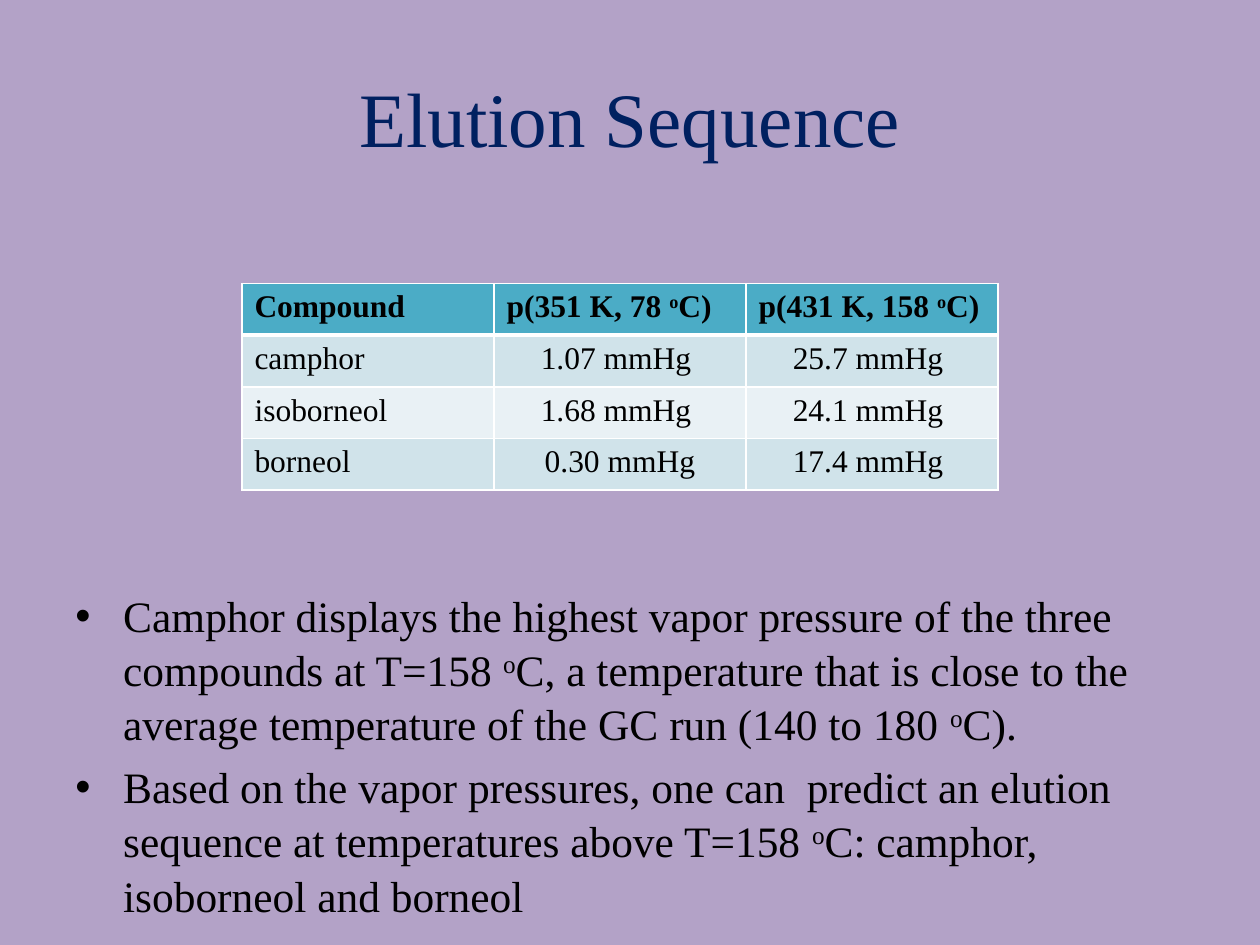
"""Build the Elution Sequence slide with a vapor pressure table and conclusions."""
import dataclasses
import typing

import lxml.etree
import pptx
import pptx.dml.color
import pptx.enum.text
import pptx.oxml.ns
import pptx.util

Inches = pptx.util.Inches
Pt = pptx.util.Pt
RGB = pptx.dml.color.RGBColor.from_string
ALIGN = pptx.enum.text.PP_ALIGN
ANCHOR = pptx.enum.text.MSO_ANCHOR
qn = pptx.oxml.ns.qn


@dataclasses.dataclass(frozen=True)
class Theme:
    font: str = "Times New Roman"
    background: str = "B3A2C7"
    title: str = "002060"
    text: str = "000000"
    header: str = "4BACC6"
    bands: tuple[str, str] = ("D0E3EA", "E9F1F5")
    border: str = "FFFFFF"
    title_size: float = 44
    body_size: float = 24.8
    table_size: float = 18


class Run(typing.NamedTuple):
    text: str
    raised: bool = False


class Row(typing.NamedTuple):
    cells: tuple[tuple[Run, ...], ...]
    fill: str
    header: bool = False


THEME = Theme()
DEGREE = Run("o", True)


def degrees(*parts: str) -> tuple[Run, ...]:
    """Join text parts with a raised degree letter."""
    runs = [Run(parts[0])]
    for part in parts[1:]:
        runs += [DEGREE, Run(part)]
    return tuple(runs)


DATA = (
    ("camphor", "1.07 mmHg ", "25.7 mmHg "),
    ("isoborneol", "1.68 mmHg ", "24.1 mmHg "),
    ("borneol", "0.30 mmHg", "17.4 mmHg "),
)
HEADER = Row(
    (degrees("Compound"), degrees("p(351 K, 78 ", "C)"), degrees("p(431 K, 158 ", "C)")),
    THEME.header,
    True,
)
ROWS = (HEADER,) + tuple(
    Row(tuple(degrees(value) for value in values), THEME.bands[i % 2])
    for i, values in enumerate(DATA)
)
BULLETS = (
    degrees(
        "Camphor displays the highest vapor pressure of the three compounds at T=158 ",
        "C, a temperature that is close to the average temperature of the GC run (140 to 180 ",
        "C).",
    ),
    degrees(
        "Based on the vapor pressures, one can  predict an elution sequence "
        "at temperatures above T=158 ",
        "C: camphor, isoborneol and borneol",
    ),
)


def set_all(target: typing.Any, values: dict[str, typing.Any]) -> None:
    """Set each named attribute on the target."""
    for name, value in values.items():
        setattr(target, name, value)


def add_runs(p: typing.Any, runs: typing.Iterable[Run], size: float,
             color: str = THEME.text, bold: bool = False) -> None:
    """Add formatted runs to a paragraph."""
    for item in runs:
        r = p.add_run()
        r.text = item.text
        set_all(r.font, {"name": THEME.font, "size": Pt(size), "bold": bold})
        r.font.color.rgb = RGB(color)
        if item.raised:
            r._r.get_or_add_rPr().set("baseline", "30000")


def add_borders(cell: typing.Any, widths: dict[str, float]) -> None:
    """Draw the borders of a cell, given in points by side."""
    tc_pr = cell._tc.get_or_add_tcPr()
    for side, width in widths.items():
        line = lxml.etree.SubElement(tc_pr, qn(f"a:ln{side}"), w=str(Pt(width)))
        fill = lxml.etree.SubElement(line, qn("a:solidFill"))
        lxml.etree.SubElement(fill, qn("a:srgbClr"), val=THEME.border)


def add_title(s: typing.Any, text: str) -> None:
    """Place and format the slide title."""
    sp = s.shapes.title
    set_all(sp, {"left": Inches(0.5), "top": Inches(0.3),
                 "width": Inches(9), "height": Inches(1.25)})
    tf = sp.text_frame
    set_all(tf, {"word_wrap": True, "vertical_anchor": ANCHOR.MIDDLE})
    p = tf.paragraphs[0]
    p.alignment = ALIGN.CENTER
    add_runs(p, [Run(text)], THEME.title_size, THEME.title)


def add_pressure_table(s: typing.Any, rows: tuple[Row, ...]) -> None:
    """Add the vapor pressure table."""
    table = s.shapes.add_table(len(rows), len(rows[0].cells), Inches(1.92), Inches(2.25),
                               Inches(6), Inches(0.41 * len(rows))).table
    for i, row in enumerate(rows):
        for j, runs in enumerate(row.cells):
            cell = table.cell(i, j)
            add_borders(cell, {"L": 1, "R": 1, "T": 3 if i == 1 else 1,
                               "B": 3 if row.header else 1})
            cell.fill.solid()
            cell.fill.fore_color.rgb = RGB(row.fill)
            p = cell.text_frame.paragraphs[0]
            p.alignment = ALIGN.CENTER if j and not row.header else ALIGN.LEFT
            add_runs(p, runs, THEME.table_size, bold=row.header)


def add_bullets(s: typing.Any, bullets: tuple[tuple[Run, ...], ...]) -> None:
    """Add the bulleted conclusions."""
    tf = s.shapes.add_textbox(Inches(0.5), Inches(4.61), Inches(9), Inches(2.65)).text_frame
    tf.word_wrap = True
    for i, runs in enumerate(bullets):
        p = tf.add_paragraph() if i else tf.paragraphs[0]
        set_all(p, {"line_spacing": 1.04, "space_after": Pt(5)})
        p_pr = p._p.get_or_add_pPr()
        p_pr.set("marL", str(Inches(0.38)))
        p_pr.set("indent", str(Inches(-0.38)))
        lxml.etree.SubElement(p_pr, qn("a:buFont"), typeface="Arial")
        lxml.etree.SubElement(p_pr, qn("a:buChar"), char="•")
        add_runs(p, runs, THEME.body_size)


def main() -> None:
    """Build and save the presentation."""
    prs = pptx.Presentation()
    set_all(prs, {"slide_width": Inches(10), "slide_height": Inches(7.5)})
    s = prs.slides.add_slide(prs.slide_layouts.get_by_name("Title Only"))
    s.background.fill.solid()
    s.background.fill.fore_color.rgb = RGB(THEME.background)
    add_title(s, "Elution Sequence")
    add_bullets(s, BULLETS)
    add_pressure_table(s, ROWS)
    prs.save("out.pptx")


if __name__ == "__main__":
    main()
